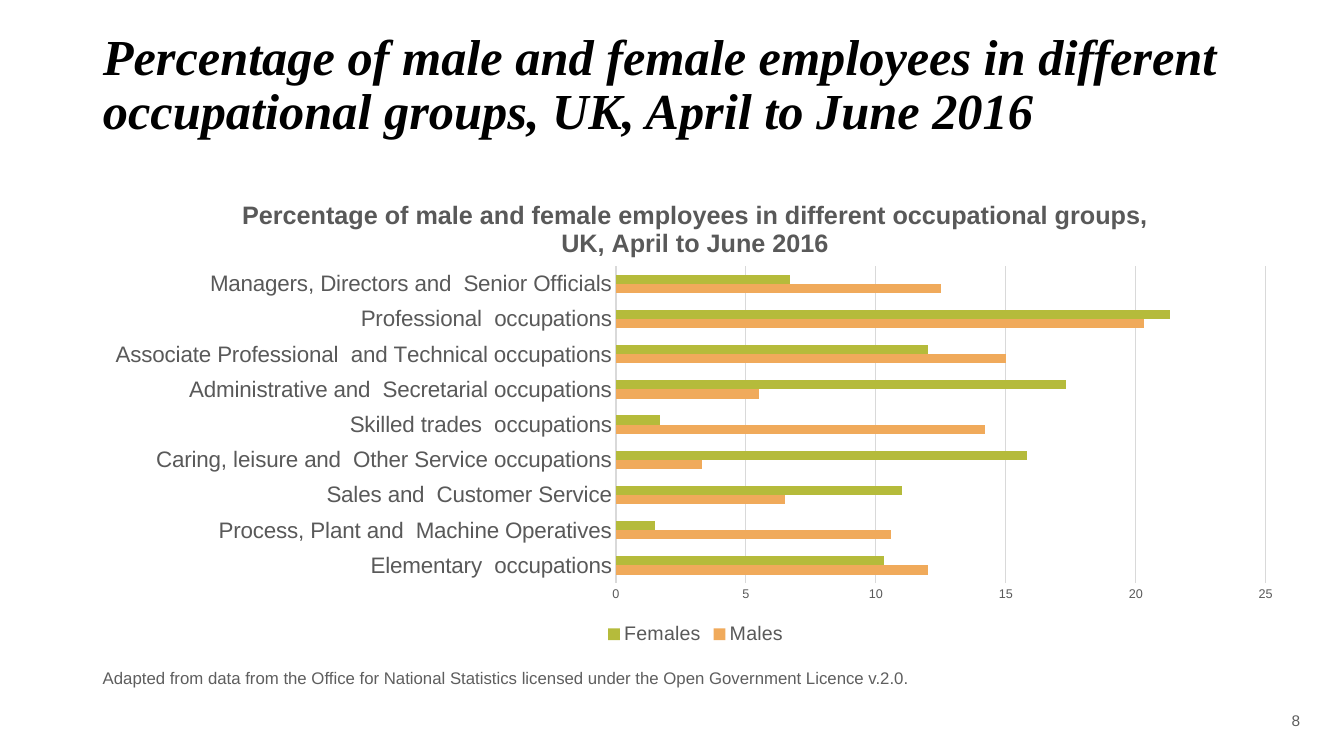
from dataclasses import dataclass

from lxml.etree import SubElement
from pptx import Presentation
from pptx.chart.data import CategoryChartData
from pptx.dml.color import RGBColor
from pptx.enum.chart import XL_CHART_TYPE, XL_LEGEND_POSITION, XL_TICK_MARK
from pptx.enum.text import MSO_ANCHOR, PP_ALIGN
from pptx.oxml.ns import qn
from pptx.util import Cm, Pt


@dataclass(frozen=True)
class Theme:
    heading: str = "Times New Roman"
    body: str = "Arial"
    black: str = "000000"
    grey: str = "5E5E5E"
    chart_text: str = "595959"
    grid: str = "D9D9D9"
    males: str = "F0AA5B"
    females: str = "B5BB3B"
    title_size: int = 36
    chart_title_size: int = 18
    category_size: int = 16
    legend_size: int = 14
    source_size: int = 12
    number_size: int = 11
    value_size: int = 9


class Deck:
    def __init__(self, prs, theme):
        self.theme = theme
        self.slide = prs.slides.add_slide(prs.slide_layouts[5])

    def style(self, font, size, color, name=None, bold=False, italic=False):
        font.name = name or self.theme.body
        font.size = Pt(size)
        font.color.rgb = RGBColor.from_string(color)
        font.bold = bold
        font.italic = italic

    def title(self, text, x, y, w, h):
        t = self.theme
        sp = self.slide.shapes.title
        sp.left, sp.top, sp.width, sp.height = Cm(x), Cm(y), Cm(w), Cm(h)
        tf = sp.text_frame
        tf.text = text
        tf.word_wrap = True
        tf.vertical_anchor = MSO_ANCHOR.MIDDLE
        tf.margin_bottom = Cm(1.5)
        p = tf.paragraphs[0]
        p.alignment = PP_ALIGN.LEFT
        p.line_spacing = 0.9
        self.style(p.font, t.title_size, t.black, t.heading, True, True)

    def text(self, text, x, y, w, h, size, align=PP_ALIGN.LEFT, anchor=MSO_ANCHOR.TOP):
        sp = self.slide.shapes.add_textbox(Cm(x), Cm(y), Cm(w), Cm(h))
        tf = sp.text_frame
        tf.text = text
        tf.word_wrap = True
        tf.vertical_anchor = anchor
        p = tf.paragraphs[0]
        p.alignment = align
        self.style(p.font, size, self.theme.grey)

    def place(self, parent, **settings):
        layout = parent.find(qn("c:layout"))
        if layout is None:
            layout = parent.makeelement(qn("c:layout"))
            parent.insert(1 if parent.tag == qn("c:title") else 0, layout)
        manual = SubElement(layout, qn("c:manualLayout"))
        for tag, value in settings.items():
            SubElement(manual, qn(f"c:{tag}")).set("val", str(value))

    def line(self, fmt):
        fmt.line.color.rgb = RGBColor.from_string(self.theme.grid)
        fmt.line.width = Pt(0.75)

    def bar_chart(self, title, categories, series, x, y, w, h):
        t = self.theme
        data = CategoryChartData()
        data.categories = categories
        for name, values, _ in series:
            data.add_series(name, values)
        chart = self.slide.shapes.add_chart(
            XL_CHART_TYPE.BAR_CLUSTERED, Cm(x), Cm(y), Cm(w), Cm(h), data
        ).chart
        self.style(chart.font, 10, t.black)

        tf = chart.chart_title.text_frame
        tf.text = title
        self.style(tf.paragraphs[0].font, t.chart_title_size, t.chart_text, bold=True)
        chart.chart_title.include_in_layout = False
        self.place(chart.chart_title._element, xMode="edge", yMode="edge", x=0.12, y=0.05)

        plot = chart.plots[0]
        plot.gap_width = 182
        plot.vary_by_categories = False
        for s, (_, _, color) in zip(plot.series, series):
            s.format.fill.solid()
            s.format.fill.fore_color.rgb = RGBColor.from_string(color)
        self.place(chart._chartSpace.chart.plotArea, layoutTarget="inner",
                   xMode="edge", yMode="edge", x=0.434, y=0.202, w=0.539, h=0.66)

        category, value = chart.category_axis, chart.value_axis
        for axis, size in ((category, t.category_size), (value, t.value_size)):
            axis.major_tick_mark = axis.minor_tick_mark = XL_TICK_MARK.NONE
            self.style(axis.tick_labels.font, size, t.chart_text)
        category.has_major_gridlines = False
        self.line(category.format)
        value.minimum_scale, value.maximum_scale, value.major_unit = 0, 25, 5
        value.format.line.fill.background()
        value.has_major_gridlines = True
        self.line(value.major_gridlines.format)

        chart.has_legend = True
        chart.legend.position = XL_LEGEND_POSITION.BOTTOM
        chart.legend.include_in_layout = False
        self.style(chart.legend.font, t.legend_size, t.chart_text)


def main():
    theme = Theme()
    prs = Presentation()
    prs.slide_width, prs.slide_height = Cm(33.87), Cm(19.05)
    deck = Deck(prs, theme)
    heading = ("Percentage\u00a0of male and female employees in different "
               "occupational groups, UK, April to June 2016")
    categories = [
        "Elementary  occupations",
        "Process, Plant and  Machine Operatives",
        "Sales and  Customer Service",
        "Caring, leisure and  Other Service occupations",
        "Skilled trades  occupations",
        "Administrative and  Secretarial occupations",
        "Associate Professional  and Technical occupations",
        "Professional  occupations",
        "Managers, Directors and  Senior Officials",
    ]
    series = [
        ("Males", (12, 10.6, 6.5, 3.3, 14.2, 5.5, 15, 20.3, 12.5), theme.males),
        ("Females", (10.3, 1.5, 11, 15.8, 1.7, 17.3, 12, 21.3, 6.7), theme.females),
    ]
    deck.text("8", 31.17, 17.65, 1.85, 1.02, theme.number_size,
              PP_ALIGN.RIGHT, MSO_ANCHOR.MIDDLE)
    deck.text("Adapted from data from the Office for National Statistics "
              "licensed under the Open Government Licence v.2.0.",
              2.34, 16.69, 24.61, 0.76, theme.source_size)
    deck.title(heading, 2.34, 1.02, 29.46, 3.68)
    deck.bar_chart(heading, categories, series, 2.34, 4.27, 30.38, 12.09)
    prs.save("out.pptx")


if __name__ == "__main__":
    main()
